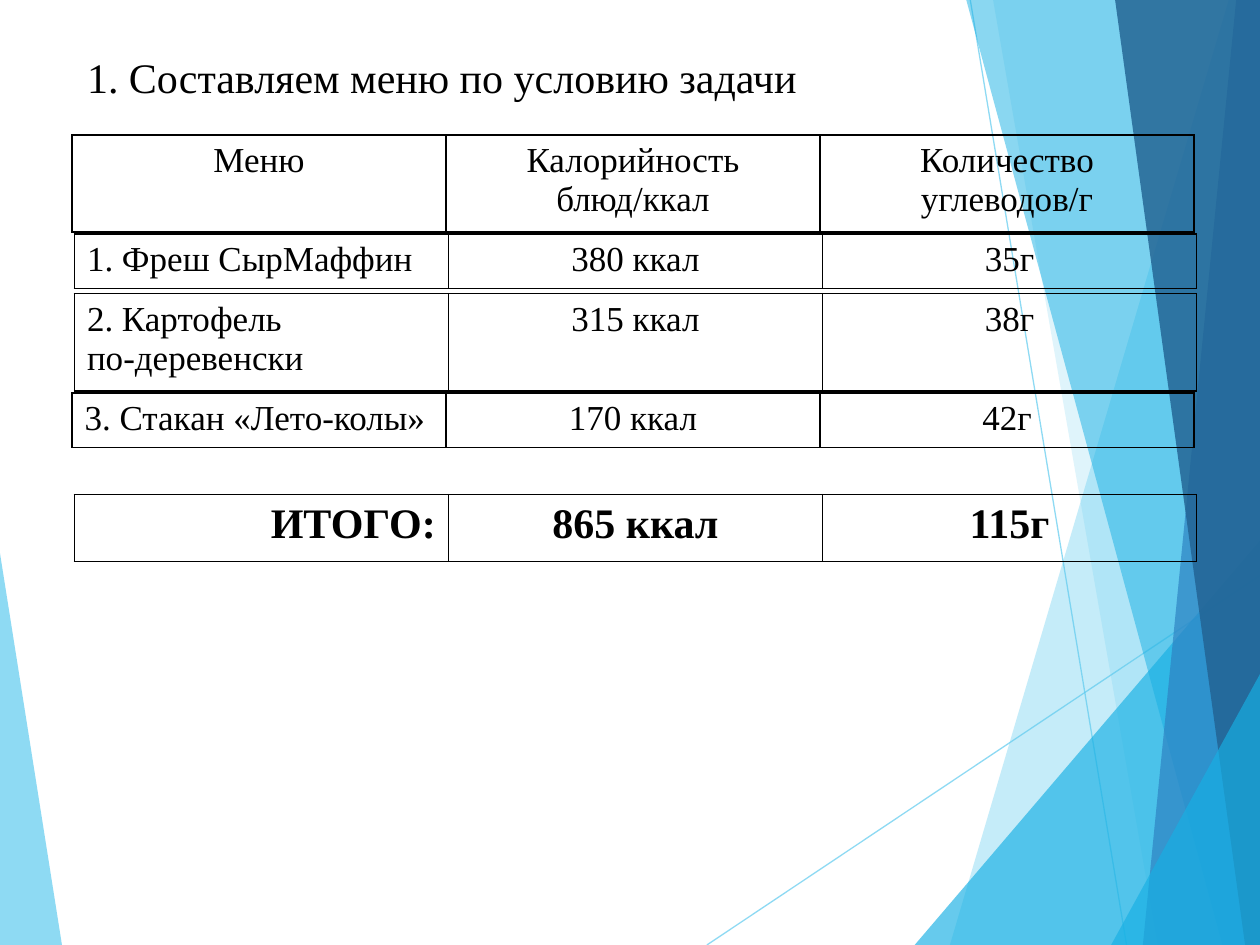
"""Build the menu slide: five single-row tables over a faceted backdrop."""
from lxml import etree
from pptx import Presentation
from pptx import util as u
from pptx.dml.color import RGBColor
from pptx.enum import shapes, text
from pptx.oxml.ns import qn

FONT, BLACK = "Times New Roman", "000000"
RIGHT, BOTTOM = 25.4, 19.05
SKY, AZURE = "5FCBEF", "17B0E4"
LEFT_ALIGN, CENTER, RIGHT_ALIGN = text.PP_ALIGN.LEFT, text.PP_ALIGN.CENTER, text.PP_ALIGN.RIGHT

TITLE = "1. Составляем меню по условию задачи"
COLUMN_WIDTH = 7.54
TABLES = [
    {"at": (1.45, 2.72), "height": 1.96, "align": CENTER,
     "cells": ["Меню", "Калорийность блюд/ккал", "Количество углеводов/г"]},
    {"at": (1.5, 4.72), "height": 1.1, "align": LEFT_ALIGN,
     "cells": ["1. Фреш СырМаффин", "380 ккал", "35г"]},
    {"at": (1.5, 5.92), "height": 1.96, "align": LEFT_ALIGN,
     "cells": ["2. Картофель\nпо-деревенски", "315 ккал", "38г"]},
    {"at": (1.45, 7.92), "height": 1.1, "align": LEFT_ALIGN,
     "cells": ["3. Стакан «Лето-колы»", "170 ккал", "42г"]},
    {"at": (1.5, 9.97), "height": 1.35, "align": RIGHT_ALIGN, "size": 24, "bold": True,
     "cells": ["ИТОГО:", "865 ккал", "115г"]},
]


def band(top, bottom):
    return [(top, 0), (bottom, BOTTOM), (RIGHT, BOTTOM), (RIGHT, 0)]


def corner(left, top):
    return [(left, BOTTOM), (RIGHT, top), (RIGHT, BOTTOM)]


LEFT_FACET = ([(0, 11.15), (1.25, BOTTOM), (0, BOTTOM)], SKY, 70)
RAYS = [((14.25, BOTTOM), (RIGHT, 11.6)), ((19.56, 0), (22.71, BOTTOM))]
RIGHT_FACETS = [
    (band(24.77, 19.15), SKY, 36),
    (band(20.02, 23.34), SKY, 20),
    (corner(18.44, 10.9), AZURE, 66),
    (band(19.48, 24.64), AZURE, 50),
    (band(24.92, 23.04), "2E83C3", 70),
    (band(22.48, 25.1), "226292", 82),
    (corner(22.4, 13.59), AZURE, 66),
]


def paint(fill, color, opacity=100):
    fill.solid()
    fill.fore_color.rgb = RGBColor.from_string(color)
    if opacity < 100:
        tint = fill._xPr.find(qn("a:solidFill"))[0]
        etree.SubElement(tint, qn("a:alpha"), val=str(opacity * 1000))


def add_facet(slide, points, color, opacity):
    corners = [(u.Cm(x), u.Cm(y)) for x, y in points]
    builder = slide.shapes.build_freeform(*corners[0])
    builder.add_line_segments(corners[1:])
    facet = builder.convert_to_shape()
    facet.shadow.inherit = False
    facet.line.fill.background()
    paint(facet.fill, color, opacity)


def add_ray(slide, start, end):
    ray = slide.shapes.add_connector(
        shapes.MSO_CONNECTOR.STRAIGHT, *(u.Cm(value) for value in start + end))
    ray.line.width = u.Pt(0.75)
    paint(ray.line.fill, SKY, 70)
    etree.SubElement(ray._element.spPr, qn("a:effectLst"))


def style(para, size, align, bold=False):
    para.alignment = align
    para.font.name = FONT
    para.font.size = u.Pt(size)
    para.font.bold = bold
    paint(para.font.fill, BLACK)


def add_borders(cell):
    properties = cell._tc.get_or_add_tcPr()
    for index, side in enumerate(("lnL", "lnR", "lnT", "lnB")):
        border = etree.Element(qn(f"a:{side}"), w=str(u.Pt(1)))
        fill = etree.SubElement(border, qn("a:solidFill"))
        etree.SubElement(fill, qn("a:srgbClr"), val=BLACK)
        properties.insert(index, border)


def add_row_table(slide, spec_row):
    left, top = spec_row["at"]
    cells = spec_row["cells"]
    table = slide.shapes.add_table(
        1, len(cells), u.Cm(left), u.Cm(top),
        u.Cm(COLUMN_WIDTH * len(cells)), u.Cm(spec_row["height"])).table
    table.first_row = table.horz_banding = False
    for index, words in enumerate(cells):
        table.columns[index].width = u.Cm(COLUMN_WIDTH)
        cell = table.cell(0, index)
        cell.text = words
        cell.fill.background()
        add_borders(cell)
        for para in cell.text_frame.paragraphs:
            style(para, spec_row.get("size", 20), CENTER if index else spec_row["align"],
                  spec_row.get("bold", False))


def add_title(slide):
    title = slide.shapes.title
    title.left, title.top, title.width, title.height = (
        u.Cm(value) for value in (1.5, 0.91, 21.8, 1.28))
    title.text = TITLE
    title.text_frame.vertical_anchor = text.MSO_ANCHOR.TOP
    style(title.text_frame.paragraphs[0], 24, LEFT_ALIGN)


def main():
    deck = Presentation()
    deck.slide_width, deck.slide_height = u.Cm(RIGHT), u.Cm(BOTTOM)
    slide = deck.slides.add_slide(deck.slide_layouts[5])
    add_facet(slide, *LEFT_FACET)
    for ray in RAYS:
        add_ray(slide, *ray)
    for facet in RIGHT_FACETS:
        add_facet(slide, *facet)
    add_title(slide)
    for spec_row in TABLES:
        add_row_table(slide, spec_row)
    deck.save("out.pptx")


if __name__ == "__main__":
    main()
